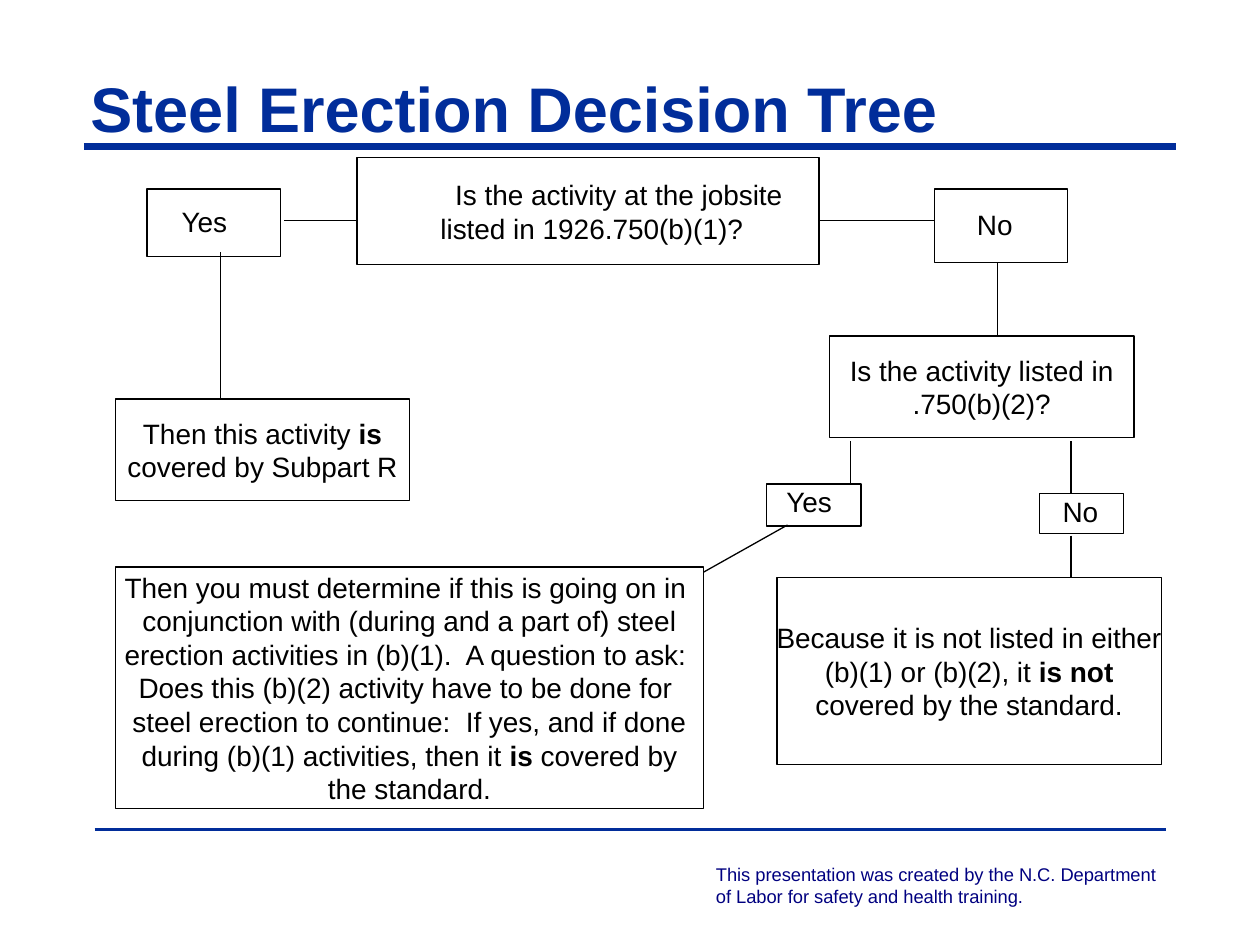
import dataclasses
import typing

import pptx
import pptx.dml.color
import pptx.enum.shapes
import pptx.enum.text
import pptx.oxml.ns
import pptx.util
from lxml import etree

RGB = pptx.dml.color.RGBColor
BLACK = RGB(0x00, 0x00, 0x00)
WHITE = RGB(0xFF, 0xFF, 0xFF)
BLUE = RGB(0x01, 0x2D, 0x9A)
NAVY = RGB(0x00, 0x00, 0x80)
FONT = "Arial"

# The slide is a grid of 120 columns and 90 rows
WIDE, HIGH = pptx.util.Inches(10), pptx.util.Inches(7.5)
COLS, ROWS = 120, 90

ANCHOR = pptx.enum.text.MSO_ANCHOR
ALIGN = pptx.enum.text.PP_ALIGN
SIZING = pptx.enum.text.MSO_AUTO_SIZE
RECT = pptx.enum.shapes.MSO_SHAPE.RECTANGLE
LINE = pptx.enum.shapes.MSO_CONNECTOR.STRAIGHT

TIGHT = {"margin_left": 0, "margin_top": 0, "margin_right": 0,
         "margin_bottom": 0, "word_wrap": False,
         "vertical_anchor": ANCHOR.MIDDLE}


class Area(typing.NamedTuple):
    col: float
    row: float
    cols: float
    rows: float


@dataclasses.dataclass
class Node:
    area: Area
    lines: tuple            # *stars* enclose bold words
    shifts: tuple = ()      # left margin of each line, in inches


@dataclasses.dataclass
class Tag:
    area: Area
    inner: Area
    text: str


NODES = [
    Node(Area(34, 15, 44, 10.2),
         ("Is the activity at the jobsite", "listed in 1926.750(b)(1)?"),
         (0.49, 0.06)),
    Node(Area(79, 32, 29, 9.7),
         ("Is the activity listed in", ".750(b)(2)?")),
    Node(Area(11, 38, 28, 9.7),
         ("Then this activity *is*", "covered by Subpart R")),
    Node(Area(11, 54, 56, 23),
         ("Then you must determine if this is going on in ",
          "conjunction with (during and a part of) steel",
          "erection activities in (b)(1).  A question to ask: ",
          "Does this (b)(2) activity have to be done for ",
          "steel erection to continue:  If yes, and if done",
          "during (b)(1) activities, then it *is* covered by",
          "the standard.")),
    Node(Area(74, 55, 36.6, 17.8),
         ("Because it is not listed in either",
          "(b)(1) or (b)(2), it *is not*",
          "covered by the standard.")),
]

TAGS = [
    Tag(Area(14, 18, 12.7, 6.4), Area(16.6, 18.6, 7.9, 4.9), " Yes"),
    Tag(Area(89, 18, 12.7, 7), Area(92.3, 18.7, 6.7, 5.4), " No"),
    Tag(Area(73, 46.1, 9, 4), Area(74.9, 46, 5, 3.5), "Yes"),
    Tag(Area(99, 47, 8, 3.8), Area(101.2, 47, 3.7, 3.4), "No"),
]

# Start column and row, end column and row
LINKS = [
    (34, 21, 27, 21), (78, 21, 89, 21), (21, 24, 21, 38),
    (95, 25, 95, 32), (81, 42, 81, 46), (102, 42, 102, 47),
    (102, 51, 102, 55), (75, 50, 67, 54.5),
]
RULES = [((8, 14, 112, 14), 4), ((9, 79, 111, 79), 2)]


def across(col: float) -> int:
    return round(WIDE * col / COLS)


def down(row: float) -> int:
    return round(HIGH * row / ROWS)


def place(area: Area) -> tuple:
    return (across(area.col), down(area.row),
            across(area.cols), down(area.rows))


def style(item: typing.Any, values: dict) -> None:
    for name, value in values.items():
        setattr(item, name, value)


def write(frame: typing.Any, lines: tuple, size: float, color: RGB,
          align: typing.Any, bold: bool = False, shifts: tuple = ()) -> None:
    for num, line in enumerate(lines):
        para = frame.paragraphs[0] if num == 0 else frame.add_paragraph()
        para.alignment = align
        if shifts:
            props = para._p.get_or_add_pPr()
            props.set("marL", str(pptx.util.Inches(shifts[num])))
            props.set("indent", "0")
        for part, text in enumerate(line.split("*")):
            if text:
                run = para.add_run()
                run.text = text
                style(run.font, {"name": FONT, "size": pptx.util.Pt(size),
                                 "bold": bold or part % 2 == 1})
                run.font.color.rgb = color


def draw_box(shapes: typing.Any, area: Area) -> typing.Any:
    box = shapes.add_shape(RECT, *place(area))
    box.shadow.inherit = False
    box.fill.solid()
    box.fill.fore_color.rgb = WHITE
    box.line.color.rgb = BLACK
    box.line.width = pptx.util.Pt(0.75)
    return box


def draw_node(shapes: typing.Any, node: Node) -> None:
    frame = draw_box(shapes, node.area).text_frame
    style(frame, TIGHT)
    write(frame, node.lines, 16, BLACK, ALIGN.CENTER, shifts=node.shifts)


def draw_tag(shapes: typing.Any, tag: Tag) -> None:
    group = shapes.add_group_shape().shapes
    draw_box(group, tag.area)
    frame = group.add_textbox(*place(tag.inner)).text_frame
    style(frame, TIGHT)
    write(frame, (tag.text,), 16, BLACK, ALIGN.LEFT)


def draw_line(shapes: typing.Any, ends: tuple, color: RGB,
              width: float) -> None:
    left, top, right, base = ends
    line = shapes.add_connector(LINE, across(left), down(top),
                                across(right), down(base))
    line.line.color.rgb = color
    line.line.width = pptx.util.Pt(width)
    etree.SubElement(line._element.spPr, pptx.oxml.ns.qn("a:effectLst"))


def main() -> None:
    deck = pptx.Presentation()
    style(deck, {"slide_width": WIDE, "slide_height": HIGH})
    slide = deck.slides.add_slide(deck.slide_layouts[5])
    shapes = slide.shapes

    # Rules under the title and above the footer
    for ends, width in RULES:
        draw_line(shapes, ends, BLUE, width)

    # Footer
    foot = shapes.add_textbox(*place(Area(67, 81.6, 46, 5.4))).text_frame
    foot.word_wrap = True
    write(foot, ("This presentation was created by the N.C. Department",
                 "of Labor for safety and health training."),
          10.5, NAVY, ALIGN.LEFT)

    # Title
    title = shapes.title
    spot = place(Area(8, 6, 104, 7.2))
    style(title, dict(zip(("left", "top", "width", "height"), spot)))
    edge = pptx.util.Inches(0.05)
    style(title.text_frame,
          {"margin_left": edge, "margin_top": edge, "margin_right": edge,
           "margin_bottom": 0, "word_wrap": True,
           "vertical_anchor": ANCHOR.TOP, "auto_size": SIZING.NONE})
    write(title.text_frame, ("Steel Erection Decision Tree",), 36, BLUE,
          ALIGN.LEFT, bold=True)

    # Decision tree
    for node in NODES:
        draw_node(shapes, node)
    for tag in TAGS:
        draw_tag(shapes, tag)
    for ends in LINKS:
        draw_line(shapes, ends, BLACK, 0.75)

    deck.save("out.pptx")


if __name__ == "__main__":
    main()
